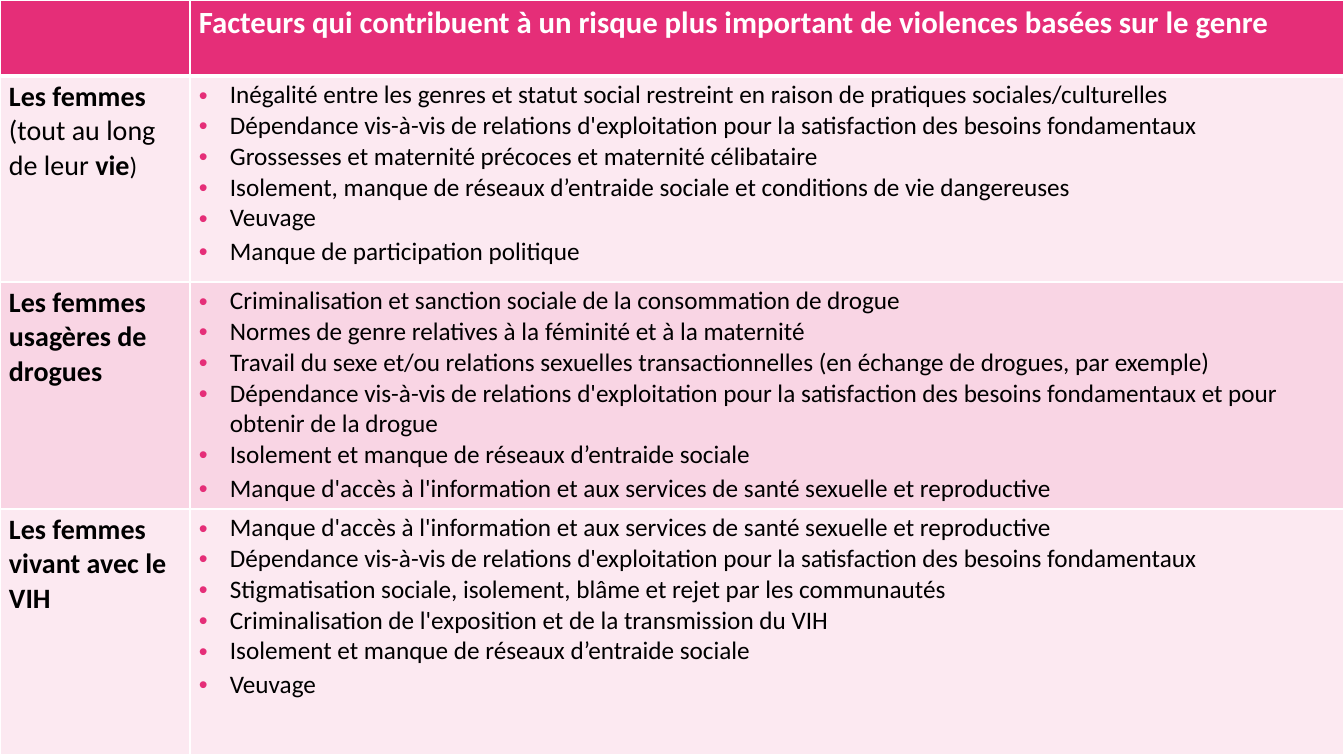
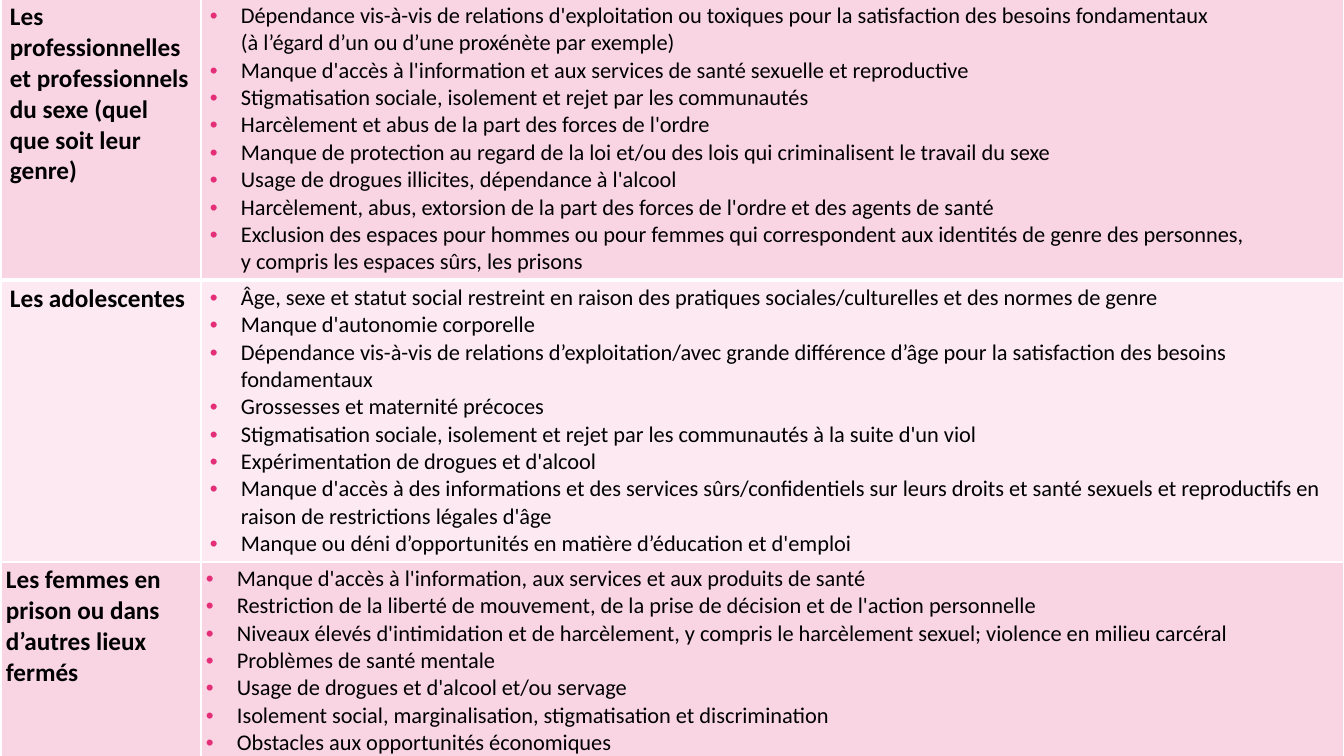
"""Builds two table slides on risk factors for gender-based violence."""
from lxml import etree
from pptx import Presentation
from pptx import util as u
from pptx.dml.color import RGBColor
from pptx.oxml.ns import qn

PX = 914400 / 100.8
SLIDE_WIDTH, SLIDE_HEIGHT = 1344, 756
FONT = "Calibri"
PINK = RGBColor(0xE5, 0x2E, 0x78)
WHITE = RGBColor(0xFF, 0xFF, 0xFF)
BLACK = RGBColor(0x00, 0x00, 0x00)
PALE, MEDIUM = 10, 20
THIN, THICK = 1, 3
BULLET_INDENT = 31
WIDE_INSETS, NARROW_INSETS = (9, 4), (5, 3)

HEADING = "Facteurs qui contribuent à un risque plus important de violences basées sur le genre"

WOMEN_ROWS = [
    ([("Les femmes ", 20, True), ("(tout au long de leur ", 20, False),
      ("vie", 20, True), (")", 18, False)], [
        "Inégalité entre les genres et statut social restreint en raison de pratiques sociales/culturelles",
        "Dépendance vis-à-vis de relations d'exploitation pour la satisfaction des besoins fondamentaux",
        "Grossesses et maternité précoces et maternité célibataire",
        "Isolement, manque de réseaux d’entraide sociale et conditions de vie dangereuses",
        "Veuvage",
        "Manque de participation politique"]),
    ([("Les femmes usagères de drogues", 20, True)], [
        "Criminalisation et sanction sociale de la consommation de drogue",
        "Normes de genre relatives à la féminité et à la maternité",
        "Travail du sexe et/ou relations sexuelles transactionnelles (en échange de drogues, par exemple)",
        "Dépendance vis-à-vis de relations d'exploitation pour la satisfaction des besoins "
        "fondamentaux et pour obtenir de la drogue",
        "Isolement et manque de réseaux d’entraide sociale",
        "Manque d'accès à l'information et aux services de santé sexuelle et reproductive"]),
    ([("Les femmes vivant avec le VIH", 20, True)], [
        "Manque d'accès à l'information et aux services de santé sexuelle et reproductive",
        "Dépendance vis-à-vis de relations d'exploitation pour la satisfaction des besoins fondamentaux",
        "Stigmatisation sociale, isolement, blâme et rejet par les communautés",
        "Criminalisation de l'exposition et de la transmission du VIH",
        "Isolement et manque de réseaux d’entraide sociale",
        "Veuvage"]),
]

OTHER_ROWS = [
    ([("Les professionnelles et professionnels du sexe (quel que soit leur genre)", 18, True)], [
        "Dépendance vis-à-vis de relations d'exploitation ou toxiques pour la satisfaction des besoins "
        "fondamentaux\n(à l’égard d’un ou d’une proxénète par exemple)",
        "Manque d'accès à l'information et aux services de santé sexuelle et reproductive",
        "Stigmatisation sociale, isolement et rejet par les communautés",
        "Harcèlement et abus de la part des forces de l'ordre",
        "Manque de protection au regard de la loi et/ou des lois qui criminalisent le travail du sexe",
        "Usage de drogues illicites, dépendance à l'alcool",
        "Harcèlement, abus, extorsion de la part des forces de l'ordre et des agents de santé",
        "Exclusion des espaces pour hommes ou pour femmes qui correspondent aux identités de genre "
        "des personnes,\ny compris les espaces sûrs, les prisons"]),
    ([("Les adolescentes", 18, True)], [
        "Âge, sexe et statut social restreint en raison des pratiques sociales/culturelles et des normes de genre",
        "Manque d'autonomie corporelle",
        "Dépendance vis-à-vis de relations d’exploitation/avec grande différence d’âge pour la "
        "satisfaction des besoins fondamentaux",
        "Grossesses et maternité précoces",
        "Stigmatisation sociale, isolement et rejet par les communautés à la suite d'un viol",
        "Expérimentation de drogues et d'alcool",
        "Manque d'accès à des informations et des services sûrs/confidentiels sur leurs droits et santé "
        "sexuels et reproductifs en raison de restrictions légales d'âge",
        "Manque ou déni d’opportunités en matière d’éducation et d'emploi"]),
    ([("Les femmes en prison ou dans d’autres lieux fermés", 18, True)], [
        "Manque d'accès à l'information, aux services et aux produits de santé",
        "Restriction de la liberté de mouvement, de la prise de décision et de l'action personnelle",
        "Niveaux élevés d'intimidation et de harcèlement, y compris le harcèlement sexuel; violence en "
        "milieu carcéral",
        "Problèmes de santé mentale",
        "Usage de drogues et d'alcool et/ou servage",
        "Isolement social, marginalisation, stigmatisation et discrimination",
        "Obstacles aux opportunités économiques"]),
]


def px(length):
    """Turn pixels into EMU."""
    return u.Emu(round(length * PX))


def format_span(span, size, bold, color=BLACK):
    """Set the font of one run."""
    span.font.name = FONT
    span.font.size = u.Pt(size)
    span.font.bold = bold
    span.font.color.rgb = color


def write_spans(cell, spans, color=BLACK):
    """Write one paragraph from (text, size, bold) pieces."""
    para = cell.text_frame.paragraphs[0]
    for words, size, bold in spans:
        span = para.add_run()
        span.text = words
        format_span(span, size, bold, color)


def add_bullet(para):
    """Give a paragraph a hanging pink bullet."""
    props = para._p.get_or_add_pPr()
    props.set("marL", str(px(BULLET_INDENT)))
    props.set("indent", str(-px(BULLET_INDENT)))
    tint = etree.SubElement(props, qn("a:buClr"))
    etree.SubElement(tint, qn("a:srgbClr"), val=str(PINK))
    etree.SubElement(props, qn("a:buFont"), typeface="Arial")
    etree.SubElement(props, qn("a:buChar"), char="•")


def write_bullets(cell, items, size, last_gap):
    """Write a bulleted list, with a small gap before its last item."""
    frame = cell.text_frame
    for index, item in enumerate(items):
        para = frame.add_paragraph() if index else frame.paragraphs[0]
        para.text = item
        if last_gap and index == len(items) - 1:
            para.space_before = u.Pt(last_gap)
        add_bullet(para)
        for span in para.runs:
            format_span(span, size, False)
        for line_break in para._p.findall(qn("a:br")):
            etree.SubElement(line_break, qn("a:rPr"), sz=str(size * 100))


def style_cell(cell, opacity, top, bottom, insets):
    """Set the borders, fill and insets of a cell."""
    props = cell._tc.get_or_add_tcPr()
    for side, width in (("L", THIN), ("R", THIN), ("T", top), ("B", bottom)):
        line = etree.SubElement(props, qn("a:ln" + side), w=str(u.Pt(width)))
        paint = etree.SubElement(line, qn("a:solidFill"))
        etree.SubElement(paint, qn("a:srgbClr"), val=str(WHITE))
    cell.fill.solid()
    cell.fill.fore_color.rgb = PINK
    if opacity < 100:
        tint = props.find(qn("a:solidFill")).find(qn("a:srgbClr"))
        etree.SubElement(tint, qn("a:alpha"), val=str(opacity * 1000))
    cell.margin_left = cell.margin_right = px(insets[0])
    cell.margin_top = cell.margin_bottom = px(insets[1])


def add_grid(page, left, top, widths, heights, opacities, insets):
    """Add a two-column table with a thick rule under its first row."""
    frame = page.shapes.add_table(len(heights), len(widths), px(left), px(top),
                                  px(sum(widths)), px(sum(heights)))
    table = frame.table
    table.first_row = table.horz_banding = False
    for column, width in zip(table.columns, widths):
        column.width = px(width)
    for index, (row, height) in enumerate(zip(table.rows, heights)):
        row.height = px(height)
        for cell in row.cells:
            style_cell(cell, opacities[index], THICK if index == 1 else THIN,
                       THICK if index == 0 else THIN, insets[index])
    return table


def fill_rows(table, rows, first, size, last_gap=0):
    """Write label and bullets in each row, from the given first row."""
    for index, (label, items) in enumerate(rows, first):
        write_spans(table.cell(index, 0), label)
        write_bullets(table.cell(index, 1), items, size, last_gap)


def main():
    """Build the deck and save it."""
    deck = Presentation()
    deck.slide_width, deck.slide_height = px(SLIDE_WIDTH), px(SLIDE_HEIGHT)
    blank = deck.slide_layouts[6]

    table = add_grid(deck.slides.add_slide(blank), 0, 0, (190, 1154), (76, 206, 227, 246),
                     (100, PALE, MEDIUM, PALE), [WIDE_INSETS] * 4)
    write_spans(table.cell(0, 1), [(HEADING, 22, True)], WHITE)
    fill_rows(table, WOMEN_ROWS, 1, 18, last_gap=2)

    table = add_grid(deck.slides.add_slide(blank), 1, -2, (200, 1143), (282, 282, 232),
                     (MEDIUM, PALE, MEDIUM), [WIDE_INSETS, WIDE_INSETS, NARROW_INSETS])
    fill_rows(table, OTHER_ROWS, 0, 16)

    deck.save("out.pptx")


if __name__ == "__main__":
    main()
